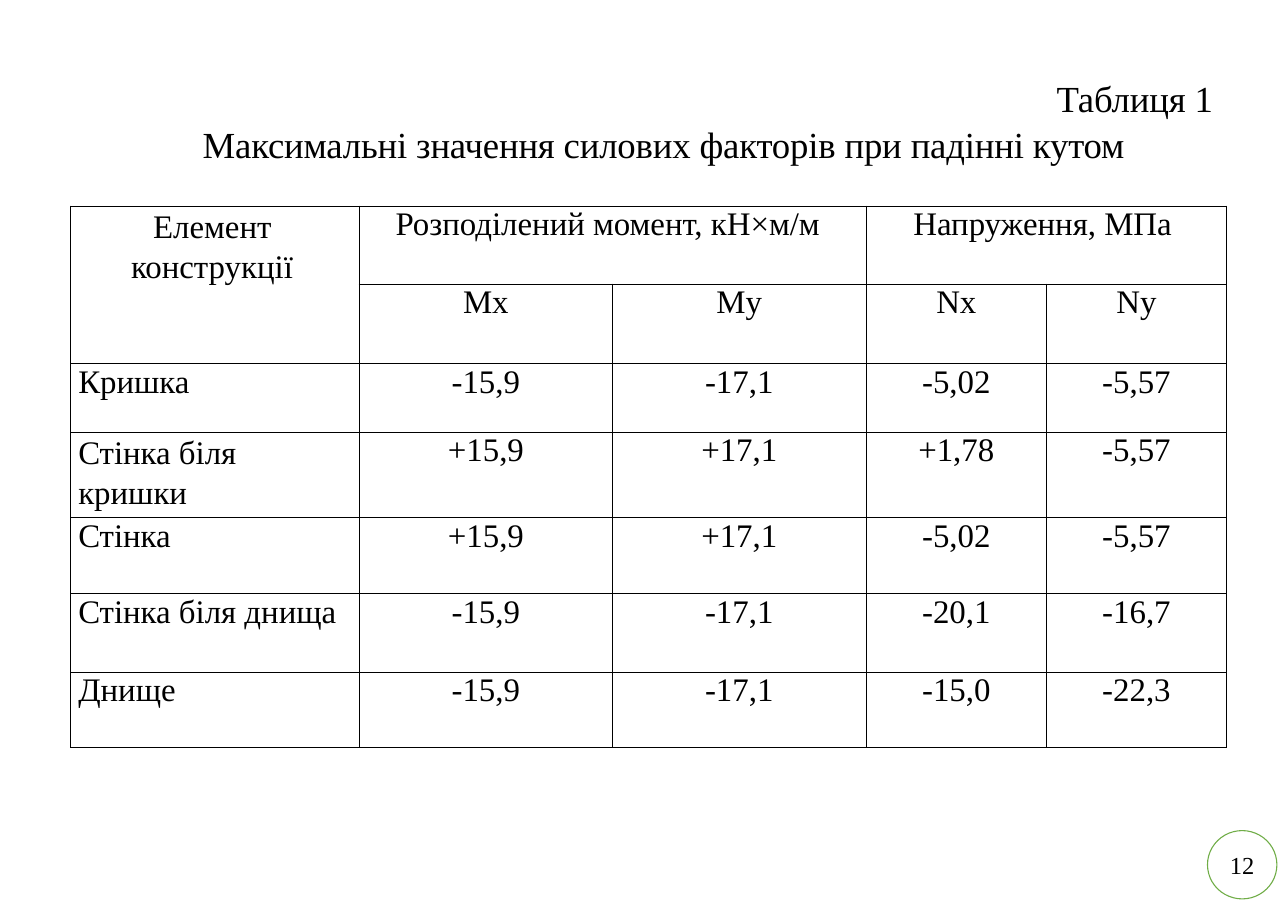
from dataclasses import dataclass
from lxml.etree import SubElement as Sub
from pptx import Presentation
from pptx.dml.color import RGBColor as Color
from pptx.enum.shapes import MSO_SHAPE as Shape
from pptx.enum.text import MSO_ANCHOR as Anchor, PP_ALIGN as Align
from pptx.oxml.ns import qn
from pptx.util import Pt

PX = 9144


@dataclass(frozen=True)
class Theme:
    font: str = "Times New Roman"
    ink: Color = Color(0, 0, 0)
    green: Color = Color(0x70, 0xAD, 0x47)
    title: float = 24
    body: float = 21.5
    page: float = 16
    rule: float = 0.71
    lead: float = 26


THEME = Theme()
COLS = [262, 230, 230, 164, 163]
ROWS = [71, 71, 62, 78, 69, 71, 68]
HEADS = [
    ["Елемент конструкції", "Розподілений момент, кН×м/м", "", "Напруження, МПа", ""],
    ["", "Mx", "My", "Nx", "Ny"],
]
DATA = [
    ["Кришка", "-15,9", "-17,1", "-5,02", "-5,57"],
    ["Стінка біля\nкришки", "+15,9", "+17,1", "+1,78", "-5,57"],
    ["Стінка", "+15,9", "+17,1", "-5,02", "-5,57"],
    ["Стінка біля днища", "-15,9", "-17,1", "-20,1", "-16,7"],
    ["Днище", "-15,9", "-17,1", "-15,0", "-22,3"],
]
MERGES = [((0, 0), (1, 0)), ((0, 1), (0, 2)), ((0, 3), (0, 4))]
INDENTS = {(0, 0): (55, 20), (0, 1): (33, 0), (0, 3): (43, 0)}
TALL = [(0, 0), (3, 0)]


def px(*nums):
    return [num * PX for num in nums]


def style(para, size, align=Align.LEFT, left=0, first=0, space=0):
    para.alignment = align
    props = para._p.get_or_add_pPr()
    props.set("marL", str(left * PX))
    props.set("indent", str(first * PX))
    for run in para.runs:
        run.font.name = THEME.font
        run.font.size = Pt(size)
        run.font.color.rgb = THEME.ink
        if space:
            run.font._element.set("spc", str(space))


def clear(frame):
    frame.margin_left = frame.margin_right = 0
    frame.margin_top = frame.margin_bottom = 0


def border(cell):
    props = cell._tc.get_or_add_tcPr()
    for side in ("lnL", "lnR", "lnT", "lnB"):
        line = Sub(props, qn(f"a:{side}"), w=str(Pt(THEME.rule)))
        fill = Sub(line, qn("a:solidFill"))
        Sub(fill, qn("a:srgbClr"), val=str(THEME.ink))


def fill_cell(cell, text, spot):
    clear(cell)
    border(cell)
    cell.fill.background()
    cell.vertical_anchor = Anchor.TOP
    cell.text_frame.text = text
    lead = spot[1] == 0 or spot in INDENTS
    left, first = INDENTS.get(spot, (7, 0) if lead else (0, 0))
    align = Align.LEFT if lead else Align.CENTER
    for para in cell.text_frame.paragraphs:
        style(para, THEME.body, align, left, first)
        if spot in TALL:
            para.line_spacing = Pt(THEME.lead)


def add_title(slide):
    frame = slide.shapes.add_textbox(*px(174, 67, 930, 81)).text_frame
    clear(frame)
    frame.word_wrap = True
    frame.text = "Таблиця 1\nМаксимальні значення силових факторів при падінні кутом"
    for para, left in zip(frame.paragraphs, (785, 10)):
        style(para, THEME.title, left=left, space=-10)
        para.line_spacing = 1.04


def add_grid(slide):
    cells = HEADS + DATA
    box = px(64, 187, sum(COLS), sum(ROWS))
    table = slide.shapes.add_table(len(ROWS), len(COLS), *box).table
    table.first_row = table.horz_banding = False
    for col, width in zip(table.columns, COLS):
        col.width = width * PX
    for row, height in zip(table.rows, ROWS):
        row.height = height * PX
    for r, texts in enumerate(cells):
        for c, text in enumerate(texts):
            fill_cell(table.cell(r, c), text, (r, c))
    for start, end in MERGES:
        table.cell(*start).merge(table.cell(*end))


def add_page(slide):
    ring = slide.shapes.add_shape(Shape.OVAL, *px(1096, 754, 63, 62))
    ring.shadow.inherit = False
    ring.fill.background()
    ring.line.color.rgb = THEME.green
    ring.line.width = Pt(THEME.rule)
    frame = ring.text_frame
    clear(frame)
    frame.vertical_anchor = Anchor.MIDDLE
    frame.text = "12"
    style(frame.paragraphs[0], THEME.page, Align.CENTER)


def main():
    deck = Presentation()
    deck.slide_width, deck.slide_height = px(1169, 827)
    slide = deck.slides.add_slide(deck.slide_layouts[6])
    add_grid(slide)
    add_title(slide)
    add_page(slide)
    deck.save("out.pptx")


if __name__ == "__main__":
    main()
